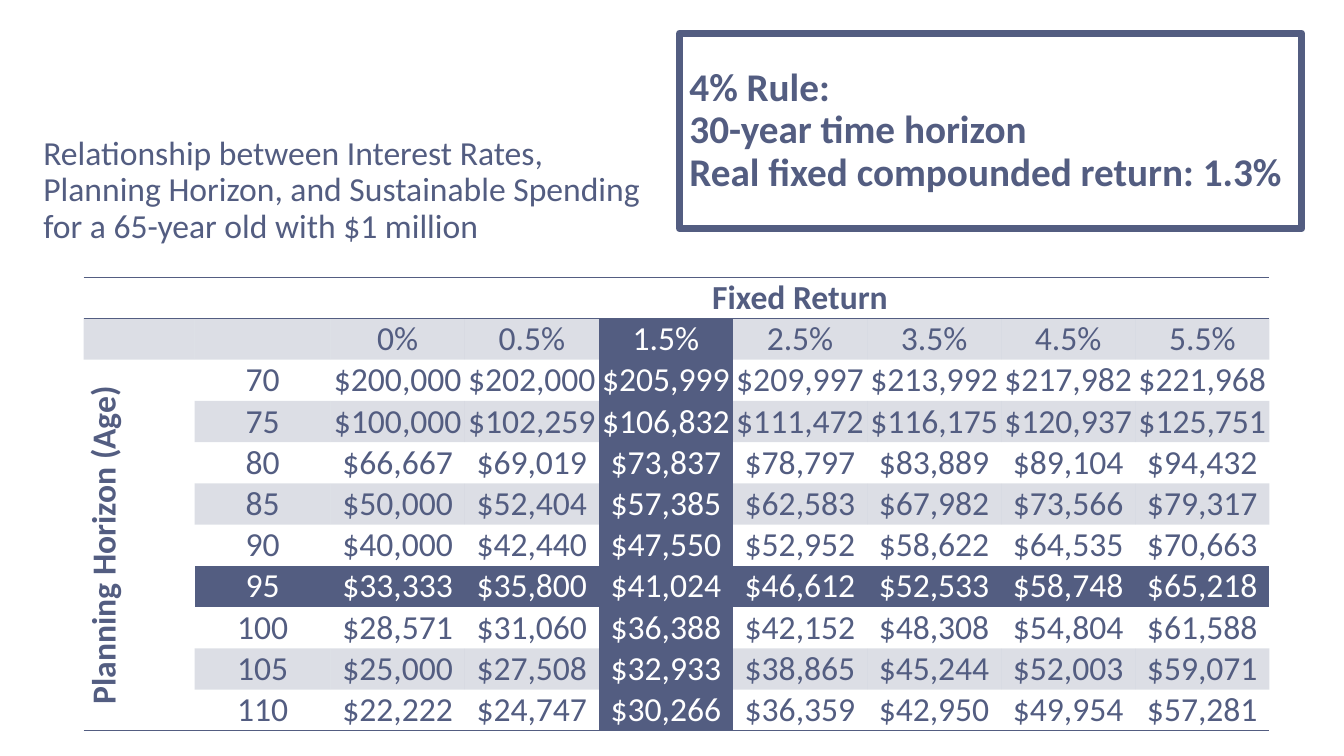
from lxml import etree
from pptx import Presentation
from pptx import util as u
from pptx.dml.color import RGBColor
from pptx.enum import shapes, text
from pptx.oxml import ns

SLATE, WHITE = "535D81", "FFFFFF"
TITLE = [
    "Relationship between Interest Rates,",
    "Planning Horizon, and Sustainable Spending",
    "for a 65-year old with $1 million",
]
RULE = ["4% Rule:", "30-year time horizon", "Real fixed compounded return: 1.3%"]
RETURNS = ["0%", "0.5%", "1.5%", "2.5%", "3.5%", "4.5%", "5.5%"]
SPENDING = {
    70: [200000, 202000, 205999, 209997, 213992, 217982, 221968],
    75: [100000, 102259, 106832, 111472, 116175, 120937, 125751],
    80: [66667, 69019, 73837, 78797, 83889, 89104, 94432],
    85: [50000, 52404, 57385, 62583, 67982, 73566, 79317],
    90: [40000, 42440, 47550, 52952, 58622, 64535, 70663],
    95: [33333, 35800, 41024, 46612, 52533, 58748, 65218],
    100: [28571, 31060, 36388, 42152, 48308, 54804, 61588],
    105: [25000, 27508, 32933, 38865, 45244, 52003, 59071],
    110: [22222, 24747, 30266, 36359, 42950, 49954, 57281],
}
TITLE_AT = (0.33, 1.17, 6.5, 1.45)
RULE_AT = (6.74, 0.33, 6.17, 1.94)
TABLE_AT = (0.83, 2.75, 11.75, 4.5)
COLUMN_WIDTHS = [1.1, 1.35] + [1.33] * len(RETURNS)
CHOSEN_RETURN, CHOSEN_AGE = "1.5%", 95
NO_STYLE = "{2D5ABB26-0587-4C30-8999-92F81FD0307C}"


def rgb(value):
    return RGBColor.from_string(value)


def inches(values):
    return [u.Inches(value) for value in values]


def apply(target, values):
    for name, value in values.items():
        setattr(target, name, value)


def style_font(font, size, color=SLATE, bold=False):
    apply(font, {"name": "Calibri", "size": u.Pt(size), "bold": bold})
    font.color.rgb = rgb(color)


def write_block(frame, content, size, bold):
    apply(frame, {"text": content, "word_wrap": True,
                  "auto_size": text.MSO_AUTO_SIZE.NONE,
                  "vertical_anchor": text.MSO_ANCHOR.MIDDLE})
    for para in frame.paragraphs:
        apply(para, {"alignment": text.PP_ALIGN.LEFT, "line_spacing": 0.9})
        for span in para.runs:
            style_font(span.font, size, bold=bold)


def fill_cell(cell, alpha=100):
    cell.fill.solid()
    cell.fill.fore_color.rgb = rgb(SLATE)
    if alpha < 100:
        color = cell._tc.tcPr.find(".//" + ns.qn("a:srgbClr"))
        etree.SubElement(color, ns.qn("a:alpha"), val=str(alpha * 1000))


def rule_cell(cell, sides):
    properties = cell._tc.get_or_add_tcPr()
    for place, side in enumerate(sides):
        line = etree.Element(ns.qn("a:ln" + side), w=str(u.Pt(1)))
        solid = etree.SubElement(line, ns.qn("a:solidFill"))
        etree.SubElement(solid, ns.qn("a:srgbClr"), val=SLATE)
        properties.insert(place, line)


def add_spending_table(page):
    rows = [["", "", "Fixed Return"] + [""] * (len(RETURNS) - 1), ["", ""] + RETURNS]
    rows += [["", str(age)] + [f"${amount:,}" for amount in amounts]
             for age, amounts in SPENDING.items()]
    rows[2][0] = "Planning Horizon (Age)"
    last = len(rows) - 1
    chosen_row = 2 + list(SPENDING).index(CHOSEN_AGE)
    chosen_column = 2 + RETURNS.index(CHOSEN_RETURN)

    frame = page.shapes.add_table(len(rows), len(COLUMN_WIDTHS), *inches(TABLE_AT))
    table = frame.table
    apply(table, {"first_row": False, "horz_banding": False})
    table._tbl.tblPr.find(ns.qn("a:tableStyleId")).text = NO_STYLE
    for column, width in zip(table.columns, COLUMN_WIDTHS):
        column.width = u.Inches(width)

    for r, row in enumerate(rows):
        for c, value in enumerate(row):
            cell = table.cell(r, c)
            chosen = (r == chosen_row and c > 0) or (c == chosen_column and r > 0)
            heading = r == 0 or (c == 0 and r > 1)
            apply(cell, dict.fromkeys(
                ("margin_left", "margin_top", "margin_right", "margin_bottom"), 0))
            cell.vertical_anchor = text.MSO_ANCHOR.BOTTOM
            if value:
                para = cell.text_frame.paragraphs[0]
                para.alignment = text.PP_ALIGN.CENTER
                span = para.add_run()
                span.text = value
                style_font(span.font, 24, WHITE if chosen else SLATE, heading)
            if chosen:
                fill_cell(cell)
            elif r % 2 and (c > 0 or r == 1):
                fill_cell(cell, 20)
            else:
                cell.fill.background()
            rule_cell(cell, {0: "TB", last: "B"}.get(r, ""))

    table.cell(0, 2).merge(table.cell(0, len(COLUMN_WIDTHS) - 1))
    horizon = table.cell(2, 0)
    horizon.merge(table.cell(last, 0))
    horizon.vertical_anchor = text.MSO_ANCHOR.MIDDLE
    horizon._tc.tcPr.set("vert", "vert270")
    rule_cell(horizon, "B")


def main():
    deck = Presentation()
    apply(deck, {"slide_width": u.Inches(13.33), "slide_height": u.Inches(7.5)})
    page = deck.slides.add_slide(deck.slide_layouts[5])

    title = page.shapes.title
    apply(title, dict(zip(("left", "top", "width", "height"), inches(TITLE_AT))))
    write_block(title.text_frame, "\v".join(TITLE), 24, False)

    add_spending_table(page)

    box = page.shapes.add_shape(shapes.MSO_SHAPE.RECTANGLE, *inches(RULE_AT))
    box.shadow.inherit = False
    box.fill.background()
    box.line.color.rgb = rgb(SLATE)
    box.line.width = u.Pt(5)
    write_block(box.text_frame, "\n".join(RULE), 28, True)

    deck.save("out.pptx")


if __name__ == "__main__":
    main()
